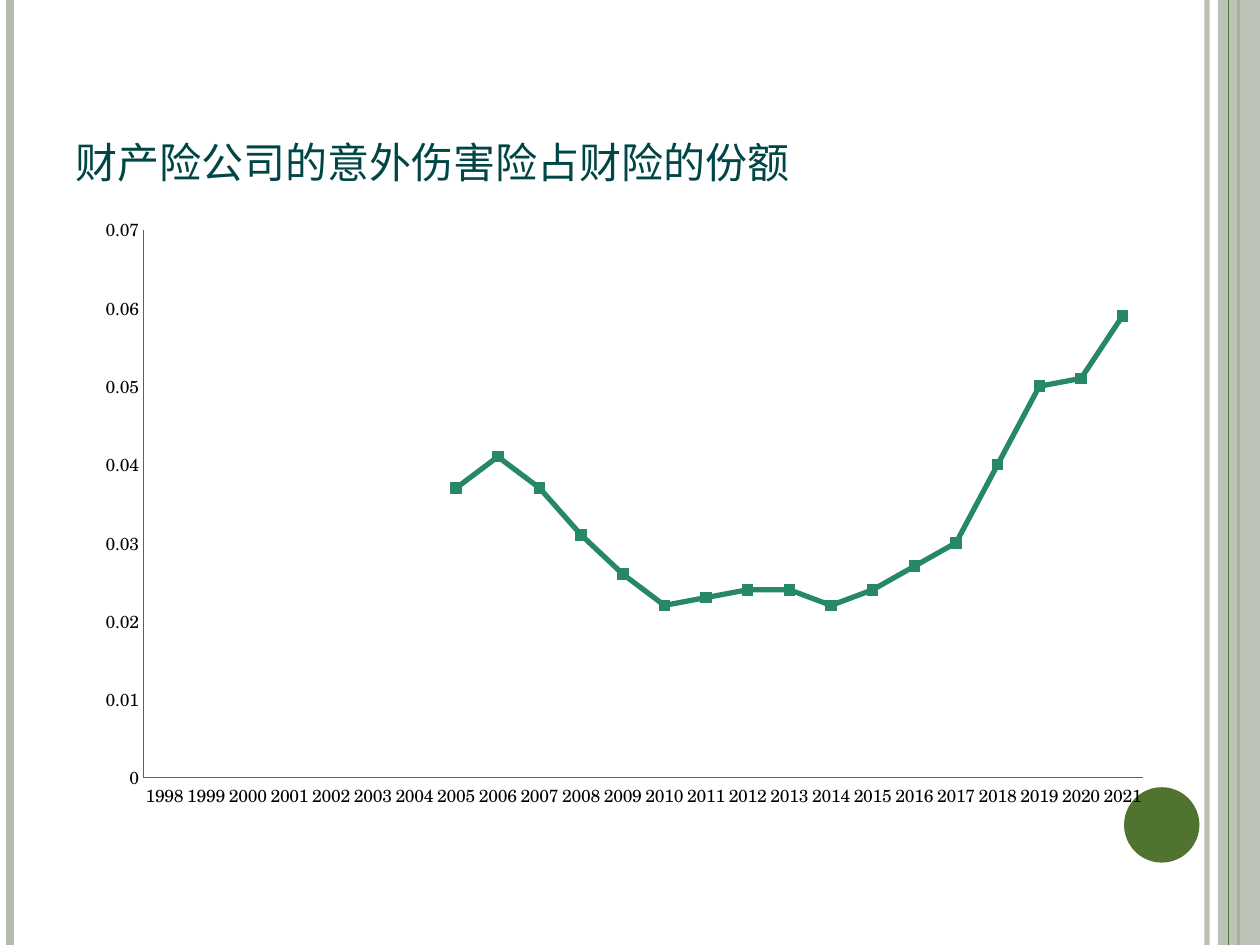
from dataclasses import dataclass

import pptx
import pptx.chart.data
import pptx.dml.color
import pptx.enum.chart
import pptx.enum.shapes
import pptx.enum.text
import pptx.oxml
import pptx.oxml.ns
import pptx.util
from lxml import etree

Cm = pptx.util.Cm
Pt = pptx.util.Pt
RGBColor = pptx.dml.color.RGBColor
qn = pptx.oxml.ns.qn

SAGE = RGBColor(0xB3, 0xBC, 0xAD)
MOSS = RGBColor(0x50, 0x74, 0x2F)
TEAL = RGBColor(0x00, 0x46, 0x46)
SERIES_GREEN = RGBColor(0x26, 0x88, 0x68)
AXIS_GRAY = RGBColor(0x60, 0x60, 0x60)
BLACK = RGBColor(0, 0, 0)
FONT = "TeX Gyre Schola"
SLIDE_W, SLIDE_H = 25.4, 19.05
FIRST_YEAR, LAST_YEAR = 1998, 2021
SHARES = [None] * 7 + [
    0.037, 0.041, 0.037, 0.031, 0.026, 0.022, 0.023, 0.024, 0.024,
    0.022, 0.024, 0.027, 0.03, 0.04, 0.05, 0.051, 0.059,
]


@dataclass
class Stripe:
    x: float
    width: float
    color: RGBColor
    opacity: int = 100


@dataclass
class Block:
    kind: int
    x: float
    y: float
    w: float
    h: float
    color: RGBColor
    opacity: int = 100


RECT = pptx.enum.shapes.MSO_SHAPE.RECTANGLE
OVAL = pptx.enum.shapes.MSO_SHAPE.OVAL
DECORATION = [
    Stripe(24.33, 3, SAGE, 93),
    Stripe(0.21, 4.5, SAGE),
    Stripe(24.97, 1.5, MOSS),
    Block(RECT, 24.55, 0, 0.85, SLIDE_H, SAGE, 87),
    Stripe(24.76, 0.75, MOSS),
    Block(OVAL, 22.66, 15.87, 1.52, 1.52, MOSS),
]


def set_opacity(element: etree._Element, percent: int) -> None:
    if percent < 100:
        color = next(element.iter(qn("a:srgbClr")))
        etree.SubElement(color, qn("a:alpha")).set("val", str(percent * 1000))


def draw_stripe(s: pptx.slide.Slide, stripe: Stripe) -> None:
    line = s.shapes.add_connector(
        pptx.enum.shapes.MSO_CONNECTOR.STRAIGHT,
        Cm(stripe.x), Cm(0), Cm(stripe.x), Cm(SLIDE_H))
    line.line.width = Pt(stripe.width)
    line.line.color.rgb = stripe.color
    spPr = line._element.spPr
    set_opacity(spPr, stripe.opacity)
    etree.SubElement(spPr, qn("a:effectLst"))


def draw_block(s: pptx.slide.Slide, block: Block) -> None:
    sp = s.shapes.add_shape(
        block.kind, Cm(block.x), Cm(block.y), Cm(block.w), Cm(block.h))
    sp.shadow.inherit = False
    sp.fill.solid()
    sp.fill.fore_color.rgb = block.color
    sp.line.fill.background()
    set_opacity(sp._element.spPr, block.opacity)


def draw_title(s: pptx.slide.Slide, text: str) -> None:
    sp = s.shapes.title
    sp.left, sp.top, sp.width, sp.height = Cm(1.27), Cm(0.76), Cm(20.75), Cm(3.18)
    tf = sp.text_frame
    tf.text = text
    tf.word_wrap = True
    tf.vertical_anchor = pptx.enum.text.MSO_ANCHOR.BOTTOM
    p = tf.paragraphs[0]
    p.alignment = pptx.enum.text.PP_ALIGN.LEFT
    p.font.name = FONT
    p.font.size = Pt(30)
    p.font.color.rgb = TEAL
    p._p.pPr.find(qn("a:defRPr")).set("cap", "small")


def place_plot(chart: pptx.chart.chart.Chart) -> None:
    plot_area = chart._chartSpace.chart.plotArea
    for old in plot_area.findall(qn("c:layout")):
        plot_area.remove(old)
    layout = etree.Element(qn("c:layout"))
    manual = etree.SubElement(layout, qn("c:manualLayout"))
    settings = [("layoutTarget", "inner"), ("xMode", "edge"), ("yMode", "edge"),
                ("x", "0.055"), ("y", "0.042"), ("w", "0.925"), ("h", "0.891")]
    for tag, value in settings:
        etree.SubElement(manual, qn(f"c:{tag}")).set("val", value)
    plot_area.insert(0, layout)


def draw_chart(s: pptx.slide.Slide) -> None:
    data = pptx.chart.data.CategoryChartData()
    data.categories = [str(year) for year in range(FIRST_YEAR, LAST_YEAR + 1)]
    data.add_series("Series 1", SHARES)
    chart = s.shapes.add_chart(
        pptx.enum.chart.XL_CHART_TYPE.LINE_MARKERS,
        Cm(1.7), Cm(4.11), Cm(21.79), Cm(12.4), data).chart
    chart.has_legend = False
    chart.has_title = False
    chart.font.name = FONT
    chart.font.size = Pt(10)
    chart.font.color.rgb = BLACK
    chart.plots[0].vary_by_categories = False
    for axis in (chart.category_axis, chart.value_axis):
        axis.has_major_gridlines = False
        axis.major_tick_mark = pptx.enum.chart.XL_TICK_MARK.NONE
        axis.minor_tick_mark = pptx.enum.chart.XL_TICK_MARK.NONE
        axis.format.line.color.rgb = AXIS_GRAY
        axis.format.line.width = Pt(0.75)
    chart.value_axis.minimum_scale = 0
    chart.value_axis.maximum_scale = 0.07
    chart.value_axis.major_unit = 0.01
    series = chart.plots[0].series[0]
    series.smooth = False
    series.format.line.color.rgb = SERIES_GREEN
    series.format.line.width = Pt(3)
    marker = series.marker
    marker.style = pptx.enum.chart.XL_MARKER_STYLE.SQUARE
    marker.size = 6
    marker.format.fill.solid()
    marker.format.fill.fore_color.rgb = SERIES_GREEN
    marker.format.line.color.rgb = SERIES_GREEN
    place_plot(chart)


def main() -> None:
    prs = pptx.Presentation()
    prs.slide_width, prs.slide_height = Cm(SLIDE_W), Cm(SLIDE_H)
    s = prs.slides.add_slide(prs.slide_layouts[5])
    for item in DECORATION:
        if isinstance(item, Stripe):
            draw_stripe(s, item)
        else:
            draw_block(s, item)
    draw_title(s, "财产险公司的意外伤害险占财险的份额")
    draw_chart(s)
    prs.save("out.pptx")


if __name__ == "__main__":
    main()
